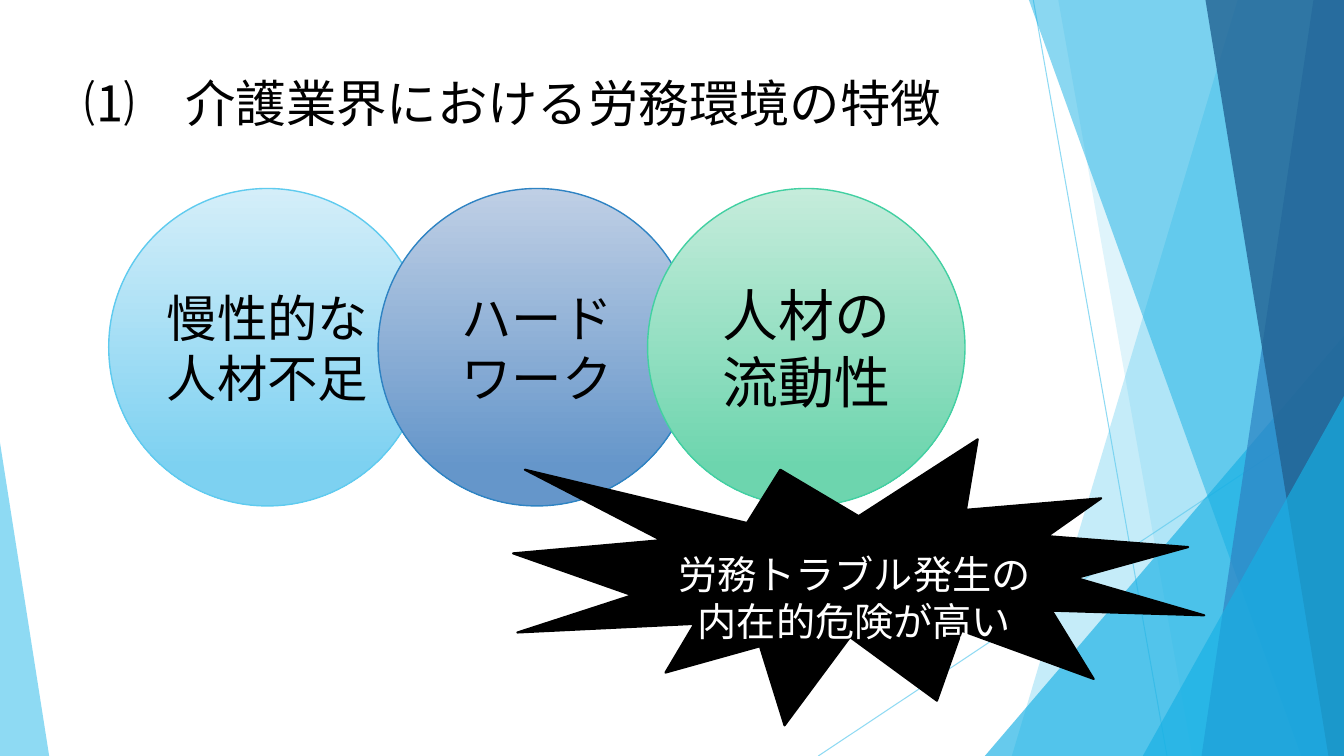
from lxml import etree
from pptx import Presentation
from pptx.dml.color import RGBColor
from pptx.enum.shapes import MSO_CONNECTOR, MSO_SHAPE
from pptx.enum.text import MSO_ANCHOR, PP_ALIGN
from pptx.oxml.ns import qn
from pptx.util import Cm, Pt

STRAIGHT = MSO_CONNECTOR.STRAIGHT
TRIANGLE = MSO_SHAPE.ISOSCELES_TRIANGLE
CIRCLE = MSO_SHAPE.FLOWCHART_CONNECTOR
BURST = MSO_SHAPE.EXPLOSION1
TOP, MIDDLE = MSO_ANCHOR.TOP, MSO_ANCHOR.MIDDLE
LEFT, CENTER = PP_ALIGN.LEFT, PP_ALIGN.CENTER

FONT = "Cabin"
SLIDE_WIDTH, SLIDE_HEIGHT = 33.87, 19.05
SKY, CYAN, BLUE, NAVY = "5FCBEF", "17B0E4", "2E83C3", "226292"


def color(hex_string):
    return RGBColor.from_string(hex_string)


def set_alpha(shape, percent):
    """Make every solid colour of the shape's fill or line translucent."""
    for node in shape._element.spPr.iter(qn("a:srgbClr")):
        etree.SubElement(node, qn("a:alpha"), val=str(percent * 1000))


def write_text(shape, text, size=36, font_color="000000", align=CENTER,
               anchor=MIDDLE, top_inset=0.13):
    frame = shape.text_frame
    frame.word_wrap = True
    frame.vertical_anchor = anchor
    frame.margin_top = Cm(top_inset)
    paragraph = frame.paragraphs[0]
    paragraph.alignment = align
    run = paragraph.add_run()
    run.text = text
    run.font.size = Pt(size)
    run.font.name = FONT
    run.font.color.rgb = color(font_color)
    etree.SubElement(run.font._element, qn("a:ea"), typeface=FONT)


def add_ray(slide, start, end):
    ray = slide.shapes.add_connector(STRAIGHT, *map(Cm, start + end))
    ray.line.color.rgb = color(SKY)
    ray.line.width = Pt(0.75)
    set_alpha(ray, 70)
    etree.SubElement(ray._element.spPr, qn("a:effectLst"))


def fill_facet(shape, fill, alpha):
    shape.shadow.inherit = False
    shape.fill.solid()
    shape.fill.fore_color.rgb = color(fill)
    shape.line.fill.background()
    set_alpha(shape, alpha)


def add_band(slide, top_x, bottom_x, right, bottom, fill, alpha):
    """Draw a full-height facet between a slanted edge and the right side."""
    builder = slide.shapes.build_freeform(Cm(top_x), 0)
    corners = [(right, 0), (right, bottom), (bottom_x, bottom)]
    builder.add_line_segments([(Cm(x), Cm(y)) for x, y in corners])
    fill_facet(builder.convert_to_shape(), fill, alpha)


def add_corner(slide, left, top, right, bottom, apex, fill, alpha):
    """Draw a right triangle; apex 0 puts its tip at the left, 1 at the right."""
    corner = slide.shapes.add_shape(
        TRIANGLE, Cm(left), Cm(top), Cm(right - left), Cm(bottom - top))
    corner.adjustments[0] = apex
    fill_facet(corner, fill, alpha)


def add_backdrop(slide, width, height):
    add_ray(slide, (26.04, 0), (29.41, height))
    add_ray(slide, (width, 10.24), (20.62, height))
    add_band(slide, 31.19, 25.5, width, height, SKY, 36)
    add_band(slide, 26.67, 30.05, width, height, SKY, 20)
    add_corner(slide, 24.82, 8.46, width, height, 1, CYAN, 66)
    add_band(slide, 25.93, 32.79, width, height, CYAN, 50)
    add_band(slide, 33.1, 30.28, width, height, BLUE, 70)
    add_band(slide, 30.38, 33.48, width, height, NAVY, 80)
    add_corner(slide, 28.8, 9.98, width, height, 1, CYAN, 66)
    add_corner(slide, 0, 11.15, 1.24, height, 0, SKY, 70)


def add_title(slide, left, top, width, height):
    title = slide.shapes.add_textbox(Cm(left), Cm(top), Cm(width), Cm(height))
    write_text(title, "⑴\u3000介護業界における労務環境の特徴", align=LEFT, anchor=TOP)


def add_feature_circles(slide, left, top, diameter, pitch):
    features = [
        ("慢性的な人材不足", 36, "D4EEF9", "7DD1F1", SKY),
        ("ハードワーク", 36, "BFCFE5", "6596CA", BLUE),
        ("人材の流動性", 40, "C5ECDB", "6DD5AE", "42D0A2"),
    ]
    for index, (text, size, light, dark, outline) in enumerate(features):
        circle = slide.shapes.add_shape(
            CIRCLE, Cm(left + index * pitch), Cm(top), Cm(diameter), Cm(diameter))
        circle.shadow.inherit = False
        circle.fill.gradient()
        circle.fill.gradient_angle = 270
        stops = zip(circle.fill.gradient_stops, (light, dark), (0, 0.88))
        for stop, shade, position in stops:
            stop.color.rgb = color(shade)
            stop.position = position
        circle.line.color.rgb = color(outline)
        circle.line.width = Pt(1)
        write_text(circle, text, size)


def add_risk_burst(slide, left, top, width, height):
    burst = slide.shapes.add_shape(BURST, Cm(left), Cm(top), Cm(width), Cm(height))
    burst.shadow.inherit = False
    burst.fill.solid()
    burst.fill.fore_color.rgb = color("000000")
    burst.line.color.rgb = color("000000")
    burst.line.width = Pt(1.5)
    write_text(burst, "労務トラブル発生の内在的危険が高い", 28, "FFFFFF", top_inset=1.31)


def main():
    presentation = Presentation()
    presentation.slide_width = Cm(SLIDE_WIDTH)
    presentation.slide_height = Cm(SLIDE_HEIGHT)
    slide = presentation.slides.add_slide(presentation.slide_layouts[6])
    add_backdrop(slide, SLIDE_WIDTH, SLIDE_HEIGHT)
    add_title(slide, left=1.88, top=1.7, width=23.88, height=3.66)
    add_feature_circles(slide, left=2.74, top=4.75, diameter=8, pitch=6.79)
    add_risk_burst(slide, left=12.93, top=11.07, width=17.42, height=7.21)
    presentation.save("out.pptx")


if __name__ == "__main__":
    main()
